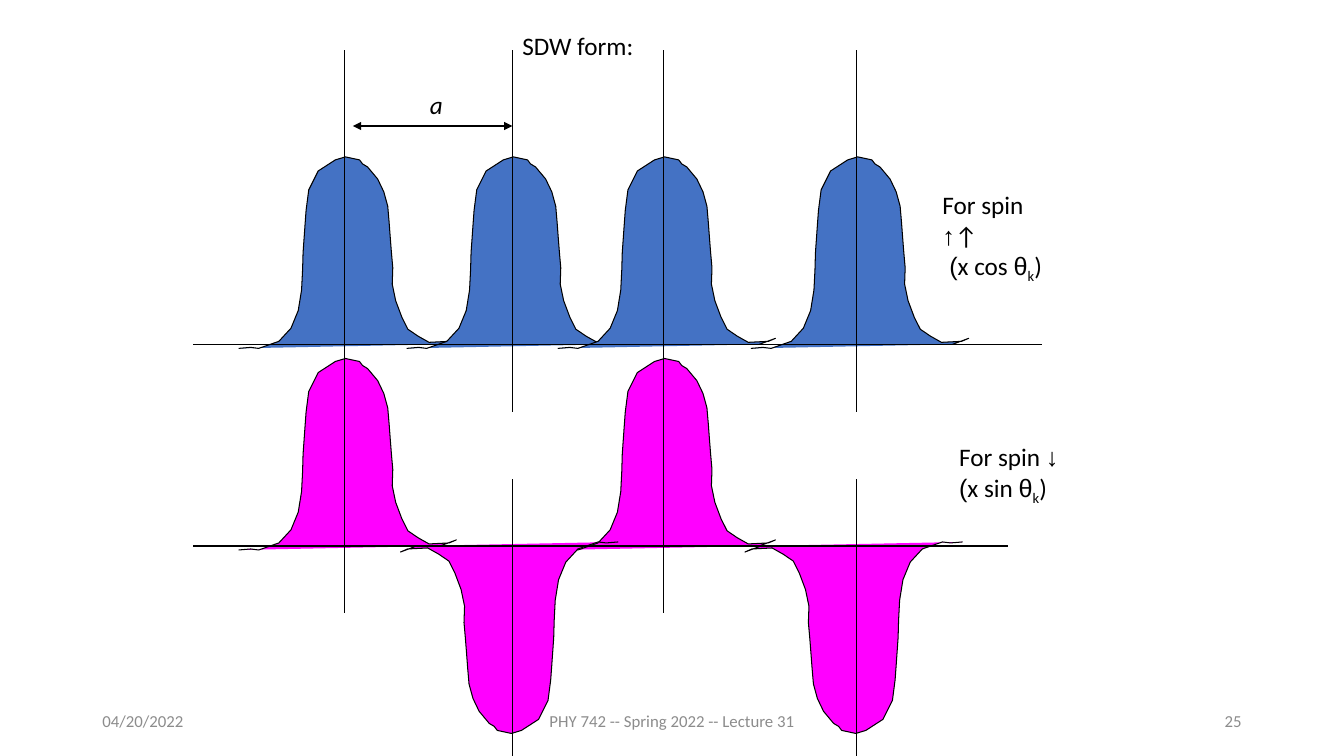
from dataclasses import dataclass
from math import ceil

from lxml import etree
from pptx import Presentation
from pptx.dml.color import RGBColor
from pptx.enum.shapes import MSO_CONNECTOR
from pptx.enum.text import MSO_ANCHOR, PP_ALIGN
from pptx.oxml.ns import qn
from pptx.util import Inches, Pt

STRAIGHT = MSO_CONNECTOR.STRAIGHT
TOP, MIDDLE = MSO_ANCHOR.TOP, MSO_ANCHOR.MIDDLE
LEFT, CENTER, RIGHT = PP_ALIGN.LEFT, PP_ALIGN.CENTER, PP_ALIGN.RIGHT

COLUMNS, ROWS = 160, 90
SLIDE_WIDTH, SLIDE_HEIGHT = Inches(13.33), Inches(7.5)
OUTLINE_UNIT = 0.12
LONGEST_STEP = 20
BLACK, WHITE, GREY = "000000", "FFFFFF", "8C8C8C"
BLUE, MAGENTA = "4472C4", "FF00FF"

OUTLINE_START = (-105, 4)
OUTLINE_CURVES = (
    (-101, 3, -97, 3, -93, 3),
    (-90, 3, -88, 4, -85, 4),
    (-77, 3, -72, -1, -65, -3),
    (-61, -7, -56, -12, -53, -16),
    (-40, -36, -42, -72, -41, -91),
    (-40, -105, -39, -119, -38, -133),
    (-37, -145, -36, -162, -26, -172),
    (-22, -176, -15, -181, -9, -183),
    (-6, -184, 1, -186, 1, -186),
    (2, -186, 13, -184, 15, -183),
    (16, -182, 17, -180, 18, -179),
    (19, -178, 21, -177, 23, -176),
    (23, -176, 31, -166, 33, -164),
    (37, -160, 42, -143, 43, -137),
    (45, -116, 46, -96, 48, -76),
    (45, -60, 50, -43, 57, -27),
    (59, -23, 60, -19, 63, -15),
    (69, -10, 77, -6, 84, -2),
    (90, 3, 95, -3, 104, -3),
    (109, -3, 113, -7, 111, -6),
)
OUTLINE_END = (95, 0)


@dataclass(frozen=True)
class Site:
    """A density peak on the lattice; direction -1 turns it upside down."""
    column: float
    row: float
    color: str
    direction: int = 1


@dataclass(frozen=True)
class Span:
    """A stretch of text in one format."""
    text: str
    font: str = "Calibri"
    italic: bool = False
    subscript: bool = False


@dataclass(frozen=True)
class Label:
    """A text box placed on the grid."""
    column: float
    row: float
    width: float
    height: float
    lines: tuple
    size: int = 18
    color: str = BLACK
    align: PP_ALIGN = LEFT
    anchor: MSO_ANCHOR = TOP
    wrap: bool = False
    fill: str = ""


def formula(function: str, opening: str) -> tuple:
    """Return the spans of a weight such as (x cos θk)."""
    return (Span(opening, "Arial"), Span(f"x {function} "), Span("θ", "Arial"),
            Span("k", subscript=True), Span(")"))


def footer(column: float, width: float, text: str, align: PP_ALIGN) -> Label:
    """Return a grey label at the foot of the slide."""
    return Label(column, 83.4, width, 4.8, ((Span(text),),), 12, GREY, align, MIDDLE, True)


LABELS = (
    footer(11, 36, "04/20/2022", LEFT),
    footer(53, 54, "PHY 742 -- Spring 2022 -- Lecture 31", CENTER),
    footer(113, 36, "25", RIGHT),
    Label(50, 10, 4, 4.85, ((Span("a", italic=True),),)),
    Label(111, 22, 15.7, 8.5,
          ((Span("For spin "), Span("↑", "Arial"), Span("↑")), formula("cos", " (")), wrap=True),
    Label(113, 52, 14.7, 8.5,
          ((Span("For spin "), Span("↓", "Arial")), formula("sin", "("))),
    Label(61, 3, 15.85, 4.85, ((Span("SDW form:"),),), fill=WHITE),
)
SITES = (
    Site(41, 41, BLUE),
    Site(102, 41, BLUE),
    Site(41, 65, MAGENTA),
    Site(79, 65, MAGENTA),
    Site(102, 65, MAGENTA, -1),
    Site(61, 41, BLUE),
    Site(61, 65, MAGENTA, -1),
    Site(79, 41, BLUE),
)


def across(columns: float) -> int:
    """Convert grid columns to a slide length."""
    return round(SLIDE_WIDTH * columns / COLUMNS)


def down(rows: float) -> int:
    """Convert grid rows to a slide length."""
    return round(SLIDE_HEIGHT * rows / ROWS)


def rgb(color: str) -> RGBColor:
    """Turn a hex string into a colour."""
    return RGBColor.from_string(color)


def outline_points() -> list[tuple[float, float]]:
    """Trace the peak around its foot, with more points on longer curves."""
    points = [OUTLINE_START]
    for curve in OUTLINE_CURVES:
        nodes = (points[-1], curve[:2], curve[2:4], curve[4:])
        reach = max(abs(nodes[3][axis] - nodes[0][axis]) for axis in (0, 1))
        steps = ceil(reach / LONGEST_STEP)
        for step in range(1, steps + 1):
            t = step / steps
            weights = ((1 - t) ** 3, 3 * t * (1 - t) ** 2, 3 * t * t * (1 - t), t ** 3)
            points.append(tuple(sum(weight * node[axis] for weight, node in zip(weights, nodes))
                                for axis in (0, 1)))
    return points + [OUTLINE_END]


def draw_line(shapes, start: tuple, end: tuple, arrows: bool = False) -> None:
    """Draw a thin black line between two grid points."""
    line = shapes.add_connector(STRAIGHT, across(start[0]), down(start[1]),
                                across(end[0]), down(end[1]))
    line.line.color.rgb = rgb(BLACK)
    line.line.width = Pt(0.75)
    properties = line._element.spPr
    if arrows:
        for tag in ("a:headEnd", "a:tailEnd"):
            etree.SubElement(properties.find(qn("a:ln")), qn(tag), type="triangle")
    etree.SubElement(properties, qn("a:effectLst"))


def draw_site(page, site: Site) -> None:
    """Draw a peak with its vertical line and its baseline."""
    shapes = page.shapes.add_group_shape().shapes

    def place(columns: float, rows: float) -> tuple[float, float]:
        """Place an offset from the site on the grid."""
        return site.column + site.direction * columns, site.row + site.direction * rows

    spots = [place(x * OUTLINE_UNIT, y * OUTLINE_UNIT) for x, y in outline_points()]
    corners = [(across(column), down(row)) for column, row in spots]
    builder = shapes.build_freeform(*corners[0])
    builder.add_line_segments(corners[1:], close=False)
    peak = builder.convert_to_shape()
    peak.shadow.inherit = False
    peak.fill.solid()
    peak.fill.fore_color.rgb = rgb(site.color)
    peak.line.color.rgb = rgb(BLACK)
    peak.line.width = Pt(0.75)
    draw_line(shapes, place(0, -35), place(0, 8))
    draw_line(shapes, place(-18, 0), place(22, 0))


def draw_label(page, label: Label) -> None:
    """Write a label, one paragraph for each line."""
    box = page.shapes.add_textbox(across(label.column), down(label.row),
                                  across(label.width), down(label.height))
    if label.fill:
        box.fill.solid()
        box.fill.fore_color.rgb = rgb(label.fill)
    frame = box.text_frame
    frame.word_wrap = label.wrap
    frame.vertical_anchor = label.anchor
    for index, line in enumerate(label.lines):
        para = frame.add_paragraph() if index else frame.paragraphs[0]
        para.alignment = label.align
        for span in line:
            run = para.add_run()
            run.text = span.text
            run.font.name = span.font
            run.font.size = Pt(label.size)
            run.font.color.rgb = rgb(label.color)
            run.font.italic = span.italic
            if span.subscript:
                run.font._element.set("baseline", "-25000")


def main() -> None:
    """Build the slide and save it."""
    deck = Presentation()
    deck.slide_width, deck.slide_height = SLIDE_WIDTH, SLIDE_HEIGHT
    page = deck.slides.add_slide(deck.slide_layouts[6])
    for label in LABELS:
        draw_label(page, label)
    draw_line(page.shapes, (42, 15), (61, 15), arrows=True)
    for site in SITES:
        draw_site(page, site)
    deck.save("out.pptx")


if __name__ == "__main__":
    main()
